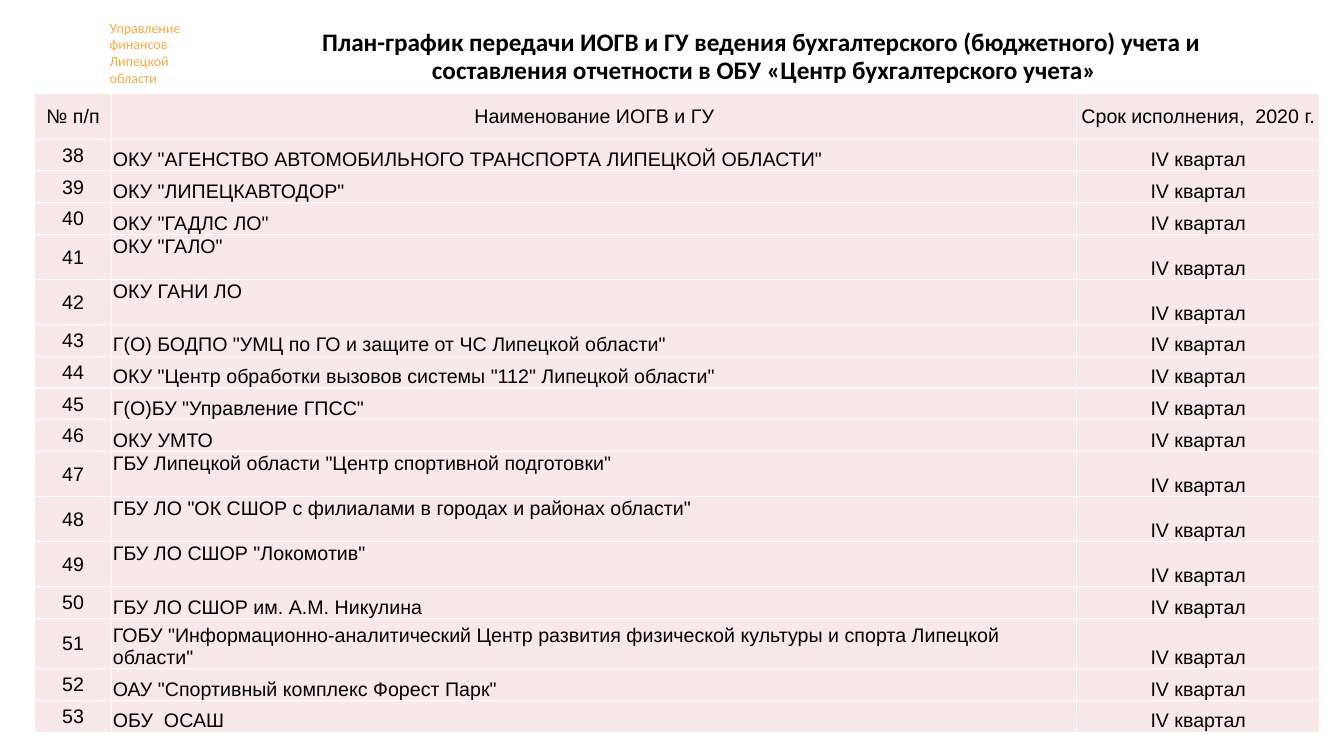
from lxml.etree import SubElement
from pptx import Presentation
from pptx.dml.color import RGBColor
from pptx.enum.text import MSO_ANCHOR, PP_ALIGN
from pptx.oxml.ns import qn
from pptx.util import Inches, Pt

COLORS = {"label": "F2AC44", "text": "000000", "cell": "F8E8E8", "border": "FFFFFF"}

HEADINGS = ["№ п/п", "Наименование ИОГВ и ГУ", "Срок исполнения,  2020 г."]
FIRST_NUMBER = 38
TERM = "IV квартал"
COLUMN_WIDTHS = [0.77, 9.57, 2.41]
HEADER_HEIGHT = 0.45
ROW_HEIGHT = 0.315
TALL_HEIGHT = 0.447
TWO_LINE_HEIGHT = 0.5
TALL_NUMBERS = {41, 42, 47, 48, 49}
TWO_LINE_NUMBER = 51
INSTITUTIONS = [
    'ОКУ "АГЕНСТВО АВТОМОБИЛЬНОГО ТРАНСПОРТА ЛИПЕЦКОЙ ОБЛАСТИ"',
    'ОКУ "ЛИПЕЦКАВТОДОР"',
    'ОКУ "ГАДЛС ЛО"',
    'ОКУ "ГАЛО"',
    "ОКУ ГАНИ ЛО",
    'Г(О) БОДПО "УМЦ по ГО и защите от ЧС Липецкой области"',
    'ОКУ "Центр обработки вызовов системы "112" Липецкой области"',
    'Г(О)БУ "Управление ГПСС"',
    "ОКУ УМТО",
    'ГБУ Липецкой области "Центр спортивной подготовки"',
    'ГБУ ЛО "ОК СШОР с филиалами в городах и районах области"',
    'ГБУ ЛО СШОР "Локомотив"',
    "ГБУ ЛО СШОР им. А.М. Никулина",
    'ГОБУ "Информационно-аналитический Центр развития физической культуры '
    'и спорта Липецкой области"',
    'ОАУ "Спортивный комплекс Форест Парк"',
    "ОБУ  ОСАШ",
]


def write_text(frame, text, font="Arial", size=14, color="text", bold=False,
               align=PP_ALIGN.LEFT, line_spacing=None):
    frame.word_wrap = True
    paragraph = frame.paragraphs[0]
    paragraph.text = text
    paragraph.alignment = align
    if line_spacing:
        paragraph.line_spacing = line_spacing
    for run in paragraph.runs:
        run.font.name = font
        run.font.size = Pt(size)
        run.font.bold = bold
        run.font.color.rgb = RGBColor.from_string(COLORS[color])


def add_heading(slide, box, text, anchor=MSO_ANCHOR.TOP, **text_format):
    shape = slide.shapes.add_textbox(*(Inches(length) for length in box))
    shape.text_frame.vertical_anchor = anchor
    write_text(shape.text_frame, text, font="Calibri", **text_format)


def add_borders(cell):
    properties = cell._tc.get_or_add_tcPr()
    for side in ("lnL", "lnR", "lnT", "lnB"):
        line = SubElement(properties, qn(f"a:{side}"), w=str(Pt(1)))
        fill = SubElement(line, qn("a:solidFill"))
        SubElement(fill, qn("a:srgbClr"), val=COLORS["border"])


def fill_cell(cell, text, anchor=MSO_ANCHOR.MIDDLE, align=PP_ALIGN.CENTER):
    cell.margin_left = cell.margin_right = cell.margin_top = Inches(0.01)
    cell.margin_bottom = 0
    cell.vertical_anchor = anchor
    add_borders(cell)
    cell.fill.solid()
    cell.fill.fore_color.rgb = RGBColor.from_string(COLORS["cell"])
    write_text(cell.text_frame, text, align=align)


def row_height(number):
    if number == TWO_LINE_NUMBER:
        return TWO_LINE_HEIGHT
    return TALL_HEIGHT if number in TALL_NUMBERS else ROW_HEIGHT


def add_schedule(slide, left, top):
    numbers = range(FIRST_NUMBER, FIRST_NUMBER + len(INSTITUTIONS))
    heights = [HEADER_HEIGHT] + [row_height(number) for number in numbers]
    table = slide.shapes.add_table(
        len(heights), len(COLUMN_WIDTHS), Inches(left), Inches(top),
        Inches(sum(COLUMN_WIDTHS)), Inches(sum(heights))).table
    for column, width in zip(table.columns, COLUMN_WIDTHS):
        column.width = Inches(width)
    for row, height in zip(table.rows, heights):
        row.height = Inches(height)

    # Header row
    for column, heading in enumerate(HEADINGS):
        fill_cell(table.cell(0, column), heading)

    # One row per institution; names in tall rows sit at the top
    for row, (number, name) in enumerate(zip(numbers, INSTITUTIONS), start=1):
        name_anchor = MSO_ANCHOR.TOP if number in TALL_NUMBERS else MSO_ANCHOR.BOTTOM
        fill_cell(table.cell(row, 0), str(number))
        fill_cell(table.cell(row, 1), name, name_anchor, PP_ALIGN.LEFT)
        fill_cell(table.cell(row, 2), TERM, MSO_ANCHOR.BOTTOM)


def main():
    presentation = Presentation()
    presentation.slide_width = Inches(13.33)
    presentation.slide_height = Inches(7.5)
    slide = presentation.slides.add_slide(presentation.slide_layouts[6])

    # Department label and title
    add_heading(slide, (0.99, 0.14, 0.97, 0.77), "Управление финансов Липецкой области",
                size=10, color="label")
    add_heading(slide, (2.1, 0.25, 10.96, 0.64),
                "План-график передачи ИОГВ и ГУ ведения бухгалтерского (бюджетного) учета и \v"
                "составления отчетности в ОБУ «Центр бухгалтерского учета»",
                anchor=MSO_ANCHOR.MIDDLE, size=18, bold=True,
                align=PP_ALIGN.CENTER, line_spacing=0.9)

    # Schedule table
    add_schedule(slide, 0.34, 0.93)
    presentation.save("out.pptx")


if __name__ == "__main__":
    main()
